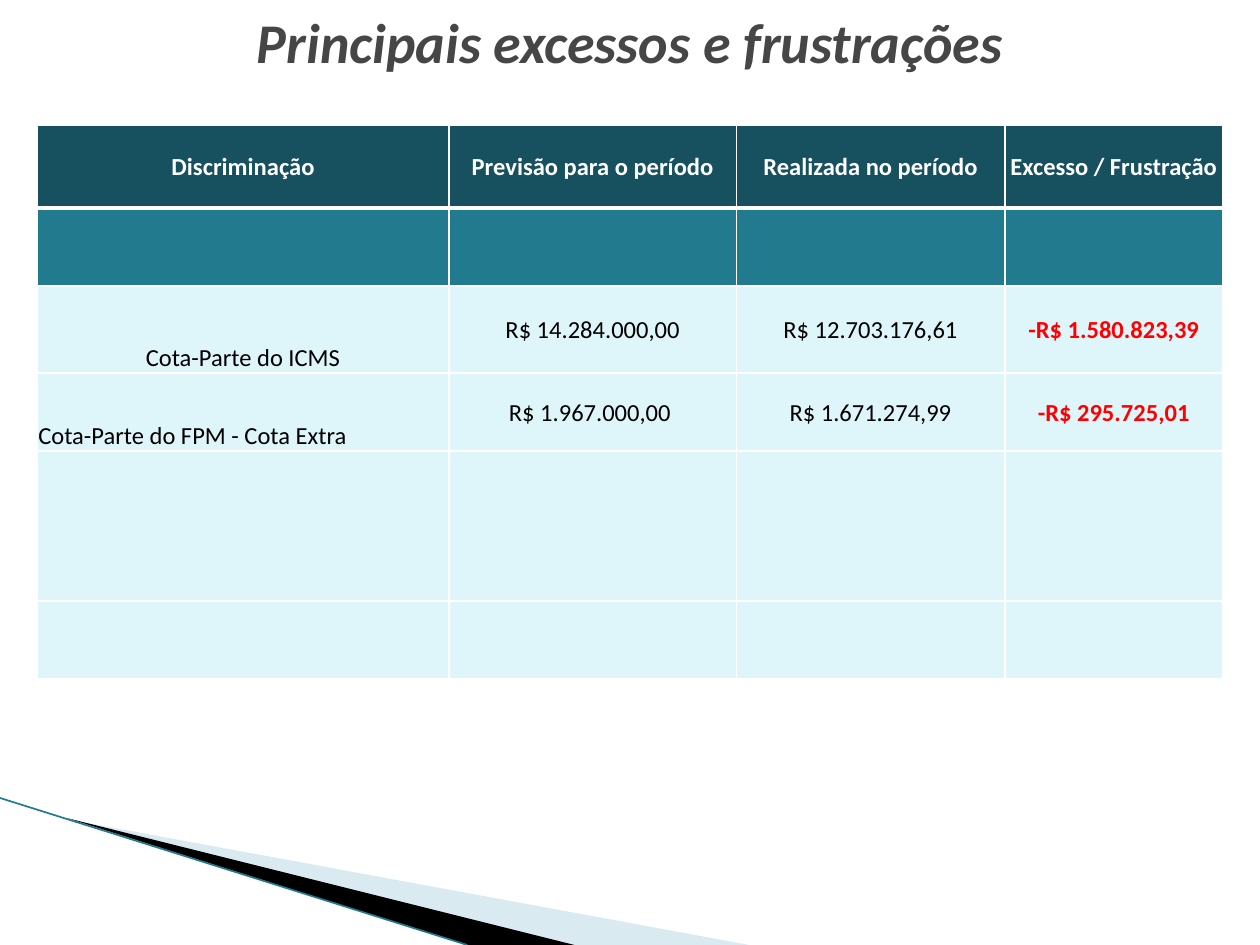
from lxml.etree import SubElement
from pptx import Presentation
from pptx.dml.color import RGBColor
from pptx.enum.shapes import MSO_CONNECTOR
from pptx.enum.text import MSO_ANCHOR, PP_ALIGN
from pptx.oxml.ns import qn
from pptx.util import Pt

COLORS = {
    "title": "464646", "header": "175160", "band": "227A8F", "body": "DEF5FA",
    "white": "FFFFFF", "black": "000000", "loss": "FF0000", "pale": "A0CBDC",
}
COLUMN_WIDTHS = [235.4, 164.2, 153.4, 124.6]
ROW_HEIGHTS = [47.5, 44.6, 49.7, 44.6, 85.7, 44.6]
ROW_FILLS = ["header", "band"] + ["body"] * 4
REVENUES = {
    0: ["Discriminação", "Previsão para o período", "Realizada no período",
        "Excesso / Frustração"],
    2: ["Cota-Parte do ICMS", "R$ 14.284.000,00", "R$ 12.703.176,61",
        "-R$ 1.580.823,39"],
    3: ["Cota-Parte do FPM - Cota Extra", "R$ 1.967.000,00 ",
        "R$ 1.671.274,99", "-R$ 295.725,01"],
}
TITLE_FONT = {"name": "Calibri", "size": Pt(32), "bold": True, "italic": True}
CELL_FONT = {"name": "Calibri", "size": Pt(14)}
CELL_FORMAT = {"margin_left": Pt(0.7), "margin_right": Pt(0.7),
               "margin_top": Pt(0.7), "margin_bottom": Pt(0)}


def rgb(name):
    return RGBColor.from_string(COLORS[name])


def apply_format(target, values):
    for attribute, value in values.items():
        setattr(target, attribute, value)


def add_wedge(slide, left, top, points, color, opacity=100):
    corners = [(Pt(left + x), Pt(top + y)) for x, y in points]
    builder = slide.shapes.build_freeform(*corners[0])
    builder.add_line_segments(corners[1:], close=True)
    wedge = builder.convert_to_shape()
    wedge.shadow.inherit = False
    wedge.line.fill.background()
    wedge.fill.solid()
    wedge.fill.fore_color.rgb = rgb(color)
    if opacity < 100:
        tint = wedge.fill._xPr.find(".//" + qn("a:srgbClr"))
        SubElement(tint, qn("a:alpha"), val=str(opacity * 1000))


def add_corner(slide, left, top, width, height):
    """Sloping bands in the bottom left corner."""
    pale_end, black_end, line_end = width, width * 0.767, width * 0.624
    add_wedge(slide, left, top,
              [(39.6, 12.4), (pale_end, height), (black_end, height)], "pale", 40)
    add_wedge(slide, left, top,
              [(38.2, 11.5), (black_end, height), (line_end, height)], "black")
    edge = slide.shapes.add_connector(
        MSO_CONNECTOR.STRAIGHT, Pt(left), Pt(top),
        Pt(left + line_end), Pt(top + height))
    edge.line.color.rgb = rgb("band")
    edge.line.width = Pt(0.95)
    SubElement(edge._element.spPr, qn("a:effectLst"))


def add_title(slide, left, top, width, height):
    title = slide.shapes.title
    apply_format(title, {"left": Pt(left), "top": Pt(top),
                         "width": Pt(width), "height": Pt(height)})
    frame = title.text_frame
    frame.text = "Principais excessos e frustrações"
    frame.vertical_anchor = MSO_ANCHOR.MIDDLE
    heading = frame.paragraphs[0]
    heading.alignment = PP_ALIGN.CENTER
    apply_format(heading.font, TITLE_FONT)
    heading.font.color.rgb = rgb("title")


def set_borders(cell, widths):
    properties = cell._tc.get_or_add_tcPr()
    for side, width in widths.items():
        border = SubElement(properties, qn(f"a:ln{side}"), w=str(Pt(width)))
        fill = SubElement(border, qn("a:solidFill"))
        SubElement(fill, qn("a:srgbClr"), val=COLORS["white"])


def fill_cell(cell, row, column):
    set_borders(cell, {"L": 1, "R": 1, "T": 3 if row == 1 else 1,
                       "B": 3 if row == 0 else 1})
    cell.fill.solid()
    cell.fill.fore_color.rgb = rgb(ROW_FILLS[row])
    if row not in REVENUES:
        return
    header, loss = row == 0, row > 0 and column == 3
    label = row > 0 and column == 0
    apply_format(cell, CELL_FORMAT)
    cell.vertical_anchor = MSO_ANCHOR.BOTTOM if label else MSO_ANCHOR.MIDDLE
    cell.text = REVENUES[row][column]
    entry = cell.text_frame.paragraphs[0]
    entry.alignment = PP_ALIGN.LEFT if label and row == 3 else PP_ALIGN.CENTER
    apply_format(entry.font, {**CELL_FONT, "bold": header or loss})
    entry.font.color.rgb = rgb("white" if header else "loss" if loss else "black")


def add_revenue_table(slide, left, top):
    table = slide.shapes.add_table(
        len(ROW_HEIGHTS), len(COLUMN_WIDTHS), Pt(left), Pt(top),
        Pt(sum(COLUMN_WIDTHS)), Pt(sum(ROW_HEIGHTS))).table
    for column, width in zip(table.columns, COLUMN_WIDTHS):
        column.width = Pt(width)
    for row, height in zip(table.rows, ROW_HEIGHTS):
        row.height = Pt(height)
    for row in range(len(ROW_HEIGHTS)):
        for column in range(len(COLUMN_WIDTHS)):
            fill_cell(table.cell(row, column), row, column)


def main():
    deck = Presentation()
    deck.slide_width, deck.slide_height = Pt(720), Pt(540)
    slide = deck.slides.add_slide(deck.slide_layouts[5])
    add_corner(slide, 0, 456, 428, 84)
    add_title(slide, 36, 10, 648, 27.4)
    add_revenue_table(slide, 21.2, 71.4)
    deck.save("out.pptx")


if __name__ == "__main__":
    main()
